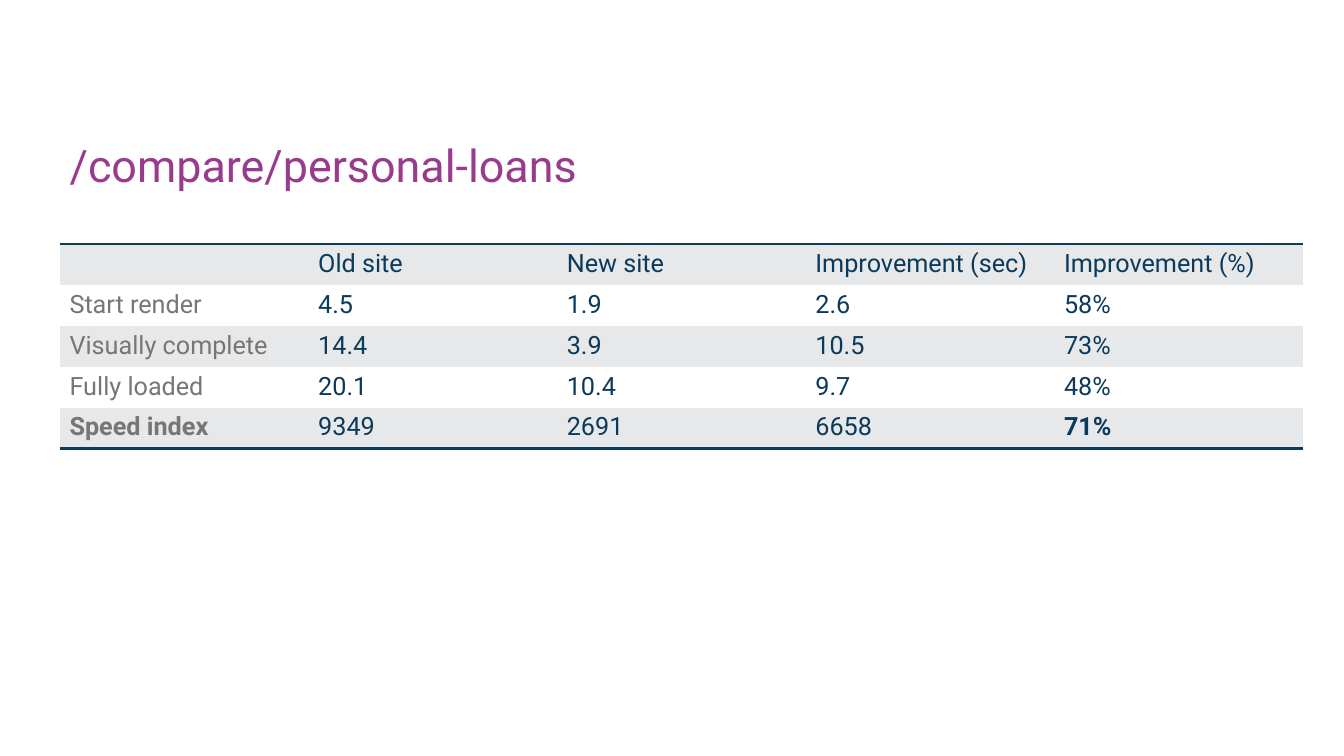
"""Build a slide comparing load times of the old and new site."""
from lxml.etree import SubElement
from pptx import Presentation
from pptx.dml.color import RGBColor as Rgb
from pptx.enum.text import MSO_ANCHOR as Anchor, MSO_AUTO_SIZE as Fit, PP_ALIGN as Align
from pptx.oxml.ns import qn
from pptx.util import Inches, Pt

HUES = {"title": "983B8E", "navy": "0C3A5B", "label": "767676",
        "band": "E7E8EA", "plain": "FFFFFF"}
ROWS = [
    ["", "Old site", "New site", "Improvement (sec)", "Improvement (%)"],
    ["Start render", "4.5", "1.9", "2.6", "58%"],
    ["Visually complete", "14.4", "3.9", "10.5", "73%"],
    ["Fully loaded", "20.1", "10.4", "9.7", "48%"],
    ["Speed index", "9349", "2691", "6658", "71%"],
]
BOLD = {"Speed index", "71%"}
NO_GRID = "{2D5ABB26-0587-4C30-8999-92F81FD0307C}"


def style(para, size, hue, bold=False):
    font = para.font
    font.name, font.size, font.bold = "Roboto", Pt(size), bold
    font.color.rgb = Rgb.from_string(HUES[hue])


def rule(props, side):
    line = props.makeelement(qn(f"a:{side}"), {"w": str(Pt(2))})
    props.insert(0, line)
    fill = SubElement(line, qn("a:solidFill"))
    SubElement(fill, qn("a:srgbClr"), val=HUES["navy"])


deck = Presentation()
deck.slide_width, deck.slide_height = Inches(13.33), Inches(7.5)
slide = deck.slides.add_slide(deck.slide_layouts[5])
left, width = Inches(0.59), Inches(12.33)

title = slide.shapes.title
title.left, title.top = left, Inches(1.25)
title.width, title.height = width, Inches(0.71)
frame = title.text_frame
frame.text = "/compare/personal-loans"
frame.word_wrap, frame.auto_size = True, Fit.NONE
frame.vertical_anchor = Anchor.BOTTOM
head = frame.paragraphs[0]
head.alignment, head.line_spacing = Align.LEFT, 0.9
style(head, 32, "title")

count = len(ROWS[0])
holder = slide.shapes.add_table(len(ROWS), count, left, Inches(2.42),
                                width, Inches(2.03))
table = holder.table
table.first_row = table.horz_banding = False
next(holder.element.iter(qn("a:tableStyleId"))).text = NO_GRID

for r, row in enumerate(ROWS):
    for c, text in enumerate(row):
        cell = table.cell(r, c)
        cell.text = text
        cell.fill.solid()
        shade = "plain" if r % 2 else "band"
        cell.fill.fore_color.rgb = Rgb.from_string(HUES[shade])
        style(cell.text_frame.paragraphs[0], 18,
              "navy" if c else "label", text in BOLD)

props = list(holder.element.iter(qn("a:tcPr")))
for top, base in zip(props[:count], props[-count:]):
    rule(top, "lnT")
    rule(base, "lnB")

deck.save("out.pptx")
